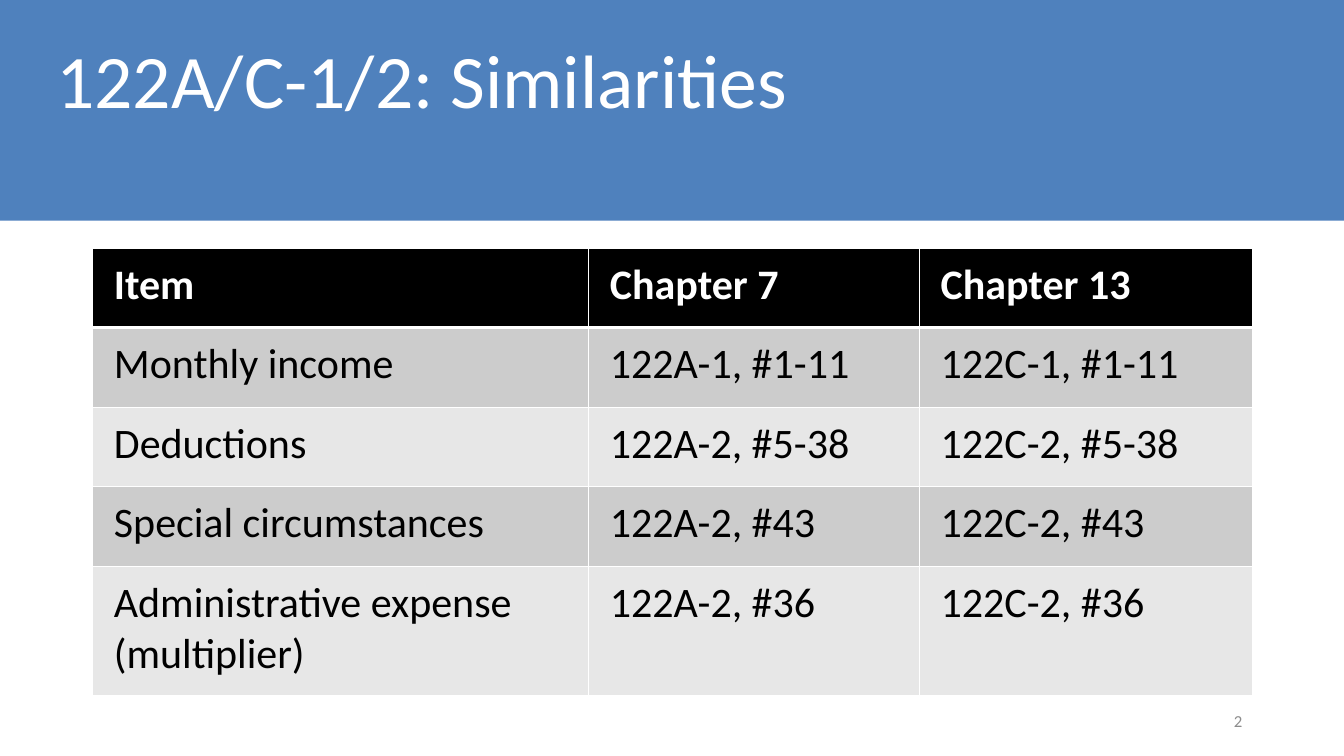
from dataclasses import dataclass

from lxml import etree
from pptx import Presentation
from pptx.dml.color import RGBColor
from pptx.enum.shapes import MSO_SHAPE as Shape
from pptx.enum.text import MSO_ANCHOR as Anchor, PP_ALIGN as Align
from pptx.oxml.ns import qn
from pptx.util import Inches, Pt

TITLE = "122A/C-1/2: Similarities"
PAGE_NUMBER = "2"
HEADER = ("Item", "Chapter 7", "Chapter 13")
ITEMS = [
    ("Monthly income", "122A-1, #1-11", "122C-1, #1-11"),
    ("Deductions", "122A-2, #5-38", "122C-2, #5-38"),
    ("Special circumstances", "122A-2, #43", "122C-2, #43"),
    ("Administrative expense (multiplier)", "122A-2, #36", "122C-2, #36"),
]


@dataclass(frozen=True)
class Theme:
    font: str = "Calibri"
    banner: str = "4F81BD"
    light: str = "FFFFFF"
    dark: str = "000000"
    muted: str = "8C8C8C"
    stripes: tuple = ("CCCCCC", "E7E7E7")
    title_size: int = 54
    table_size: int = 30
    number_size: int = 12
    grid_width: int = 1
    header_rule: int = 3


THEME = Theme()
SLIDE_W, SLIDE_H = 13.33, 7.5
MARGIN = 0.92
CONTENT_W = 11.5
COLUMNS = (4.92, 3.28, 3.3)
ROW_H, LAST_ROW_H = 0.79, 1.28
TABLE_TOP = 2.46
PAD_X, PAD_Y = 0.21, 0.11


def place(part, left, top, width, height):
    part.left, part.top = Inches(left), Inches(top)
    part.width, part.height = Inches(width), Inches(height)


def style(paragraph, size, color, bold=False):
    font = paragraph.font
    font.name, font.size, font.bold = THEME.font, Pt(size), bold
    font.color.rgb = RGBColor.from_string(color)


def paint(fill, color):
    fill.solid()
    fill.fore_color.rgb = RGBColor.from_string(color)


def add_borders(cell, widths):
    properties = cell._tc.get_or_add_tcPr()
    for index, (side, width) in enumerate(widths.items()):
        line = etree.Element(qn(f"a:ln{side}"), w=str(Pt(width)))
        solid = etree.SubElement(line, qn("a:solidFill"))
        etree.SubElement(solid, qn("a:srgbClr"), val=THEME.light)
        properties.insert(index, line)


def add_heading(slide):
    title = slide.shapes.title
    place(title, 0.46, 0.27, CONTENT_W, 1.02)
    title.text_frame.text = TITLE
    title.text_frame.vertical_anchor = Anchor.BOTTOM
    paragraph = title.text_frame.paragraphs[0]
    paragraph.alignment = Align.LEFT
    paragraph.line_spacing = 0.9
    style(paragraph, THEME.title_size, THEME.light)

    banner = slide.shapes.add_shape(Shape.RECTANGLE, 0, 0, Inches(SLIDE_W), Inches(2.19))
    banner.shadow.inherit = False
    banner.line.fill.background()
    paint(banner.fill, THEME.banner)
    title.element.addprevious(banner.element)


def add_comparison(slide):
    rows = [HEADER, *ITEMS]
    heights = [ROW_H] * (len(rows) - 1) + [LAST_ROW_H]
    table = slide.shapes.add_table(
        len(rows), len(HEADER), Inches(MARGIN), Inches(TABLE_TOP),
        Inches(CONTENT_W), Inches(sum(heights)),
    ).table
    for column, width in zip(table.columns, COLUMNS):
        column.width = Inches(width)
    for r, (entries, height) in enumerate(zip(rows, heights)):
        table.rows[r].height = Inches(height)
        is_header = r == 0
        background = THEME.dark if is_header else THEME.stripes[(r - 1) % 2]
        ink = THEME.light if is_header else THEME.dark
        borders = dict.fromkeys("LRTB", THEME.grid_width)
        if is_header:
            borders["B"] = THEME.header_rule
        elif r == 1:
            borders["T"] = THEME.header_rule
        for c, entry in enumerate(entries):
            cell = table.cell(r, c)
            cell.text = entry
            cell.margin_left = cell.margin_right = Inches(PAD_X)
            cell.margin_top = cell.margin_bottom = Inches(PAD_Y)
            style(cell.text_frame.paragraphs[0], THEME.table_size, ink, is_header)
            paint(cell.fill, background)
            add_borders(cell, borders)


def add_page_number(slide):
    width = 3
    number = slide.shapes.add_textbox(
        Inches(MARGIN + CONTENT_W - width), Inches(6.95), Inches(width), Inches(0.4)
    )
    frame = number.text_frame
    frame.word_wrap = True
    frame.vertical_anchor = Anchor.MIDDLE
    frame.text = PAGE_NUMBER
    paragraph = frame.paragraphs[0]
    paragraph.alignment = Align.RIGHT
    paragraph.space_after = Pt(6)
    style(paragraph, THEME.number_size, THEME.muted)


def main():
    deck = Presentation()
    deck.slide_width, deck.slide_height = Inches(SLIDE_W), Inches(SLIDE_H)
    slide = deck.slides.add_slide(deck.slide_layouts[5])
    add_heading(slide)
    add_page_number(slide)
    add_comparison(slide)
    deck.save("out.pptx")


if __name__ == "__main__":
    main()
